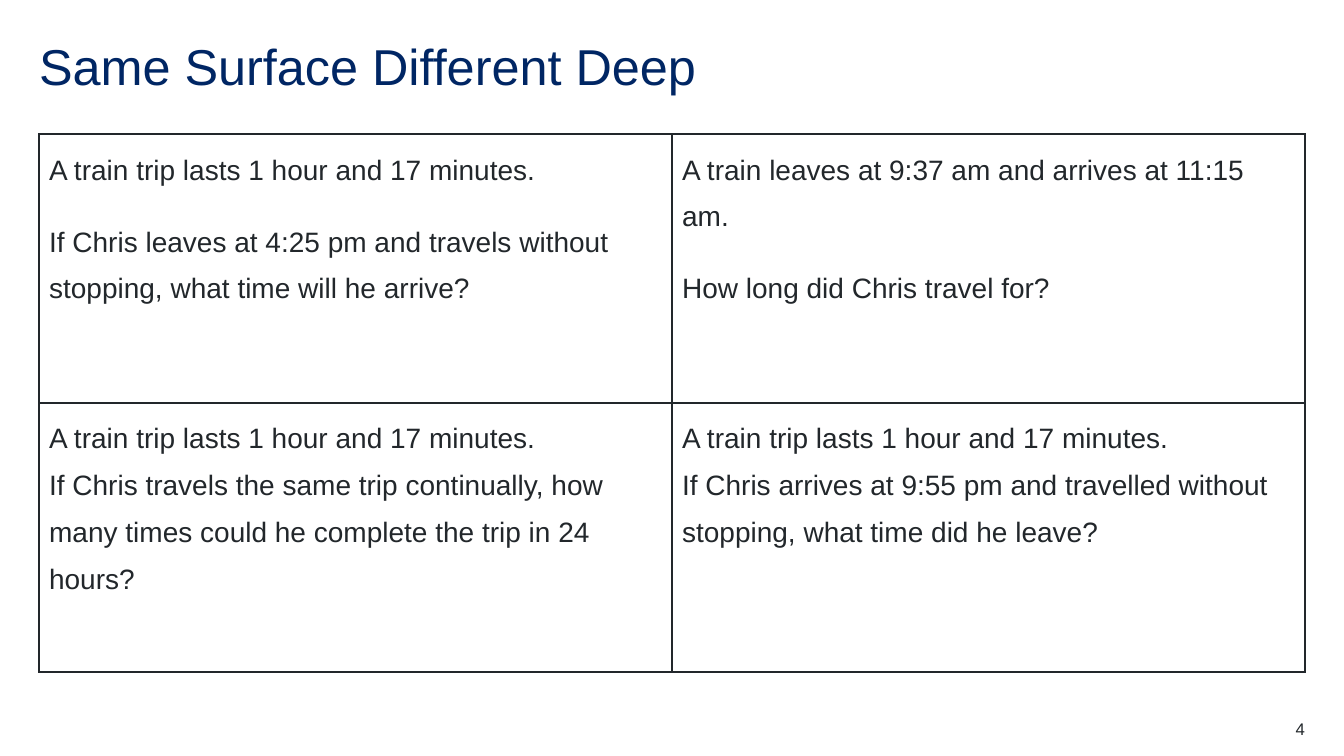
from dataclasses import dataclass

from lxml import etree
from pptx import Presentation
from pptx import util as u
from pptx.dml import color
from pptx.enum import text
from pptx.oxml import ns

EMU_PER_PX = 914400 / 100.8


@dataclass(frozen=True)
class Theme:
    font: str = "Arial"
    title: str = "002664"
    ink: str = "22272B"
    title_size: int = 36
    body_size: int = 20
    number_size: int = 12
    border_width: int = 1


THEME = Theme()

PROBLEMS = [
    [
        [
            "A train trip lasts 1 hour and 17 minutes.",
            "If Chris leaves at 4:25 pm and travels without stopping, what time will he arrive?",
        ],
        [
            "A train leaves at 9:37 am and arrives at 11:15 am.",
            "How long did Chris travel for?",
        ],
    ],
    [
        [
            "A train trip lasts 1 hour and 17 minutes.\n"
            "If Chris travels the same trip continually, how many times could he "
            "complete the trip in 24 hours?",
        ],
        [
            "A train trip lasts 1 hour and 17 minutes.\n"
            "If Chris arrives at 9:55 pm and travelled without stopping, "
            "what time did he leave?",
        ],
    ],
]


def px(n):
    return u.Emu(round(n * EMU_PER_PX))


def write(p, words, size, ink):
    p.text = words
    for r in p.runs:
        r.font.name = THEME.font
        r.font.size = u.Pt(size)
        r.font.color.rgb = color.RGBColor.from_string(ink)


def add_label(slide, box, words, size, ink):
    tf = slide.shapes.add_textbox(*map(px, box)).text_frame
    tf.word_wrap = True
    tf.margin_left = tf.margin_right = tf.margin_top = tf.margin_bottom = 0
    p = tf.paragraphs[0]
    write(p, words, size, ink)
    return tf, p


def add_title(slide, box, words):
    tf, p = add_label(slide, box, words, THEME.title_size, THEME.title)
    tf.vertical_anchor = text.MSO_ANCHOR.MIDDLE
    p.line_spacing = 0.9


def add_page_number(slide, box, number):
    tf, p = add_label(slide, box, number, THEME.number_size, THEME.ink)
    p.alignment = text.PP_ALIGN.RIGHT


def outline(cell):
    tc_pr = cell._tc.get_or_add_tcPr()
    for side in ("lnL", "lnR", "lnT", "lnB"):
        ln = etree.SubElement(tc_pr, ns.qn(f"a:{side}"), w=str(u.Pt(THEME.border_width)))
        fill = etree.SubElement(ln, ns.qn("a:solidFill"))
        etree.SubElement(fill, ns.qn("a:srgbClr"), val=THEME.ink)


def fill_cell(cell, paragraphs):
    outline(cell)
    cell.fill.background()
    tf = cell.text_frame
    for i, words in enumerate(paragraphs):
        p = tf.add_paragraph() if i else tf.paragraphs[0]
        write(p, words, THEME.body_size, THEME.ink)
        p.line_spacing = 1.5
        p.space_before = u.Pt(12 if i else 0)
        p.space_after = u.Pt(6)


def add_problem_grid(slide, box, problems):
    left, top, width, height = box
    rows, cols = len(problems), len(problems[0])
    table = slide.shapes.add_table(rows, cols, *map(px, box)).table
    table.first_row = table.horz_banding = False
    for col in table.columns:
        col.width = px(width / cols)
    for row, cells in zip(table.rows, problems):
        row.height = px(height / rows)
        for cell, paragraphs in zip(row.cells, cells):
            fill_cell(cell, paragraphs)


def build_slide(prs, box):
    left, top, width, height = box
    slide = prs.slides.add_slide(prs.slide_layouts[6])
    add_title(slide, (left, top, width, 60), "Same Surface Different Deep")
    add_problem_grid(slide, (left, top + 95, width, 538), PROBLEMS)
    add_page_number(slide, (left + width - 80, top + height - 20, 80, 20), "4")


def main():
    prs = Presentation()
    prs.slide_width, prs.slide_height = px(1344), px(756)
    build_slide(prs, (39, 39, 1266, 700))
    prs.save("out.pptx")


if __name__ == "__main__":
    main()
